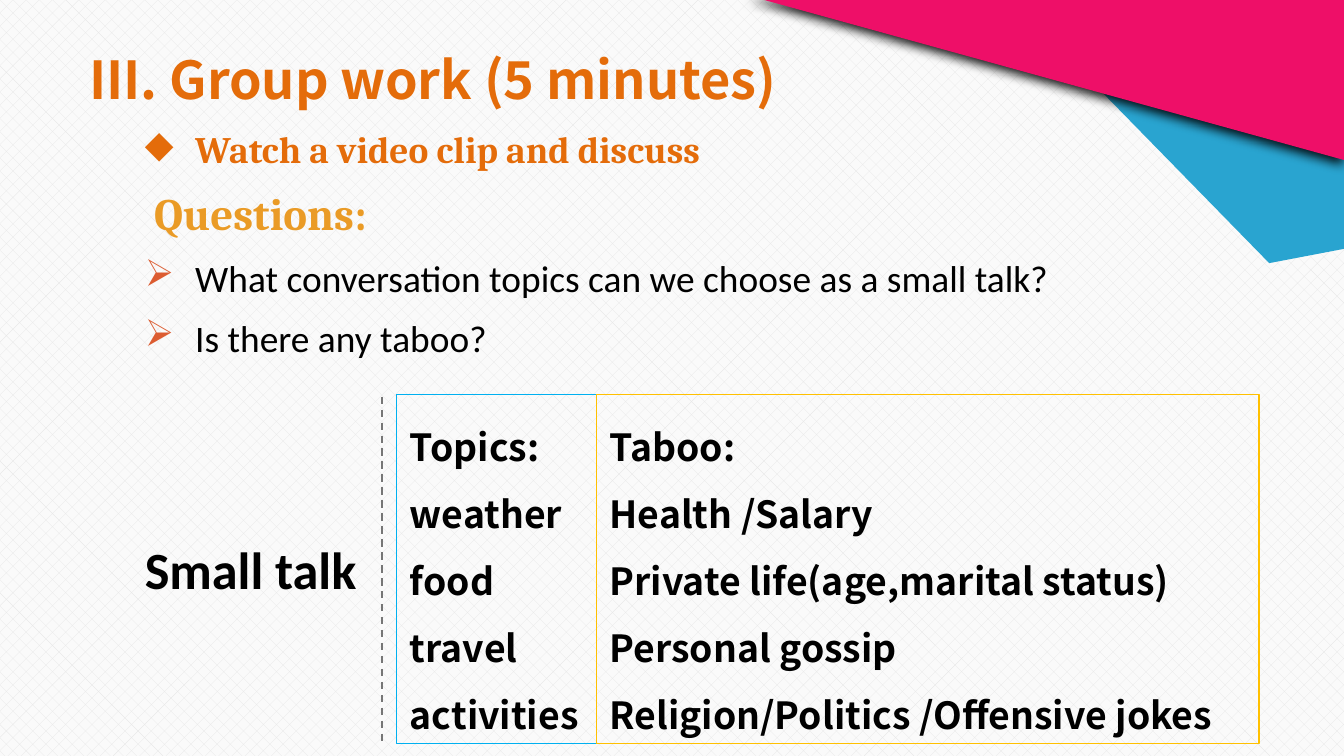
from dataclasses import dataclass

from lxml import etree
from pptx import Presentation
from pptx import util as u
from pptx.dml.color import RGBColor
from pptx.enum import dml, shapes, text
from pptx.oxml import ns

Pt = u.Pt


@dataclass(frozen=True)
class Theme:
    """Colours, fonts and type sizes of the slide."""
    paper: str = "FAFAFA"
    weave: str = "E6E6E6"
    pink: str = "EE0F68"
    blue: str = "29A4D0"
    grey: str = "767676"
    ink: str = "000000"
    orange: str = "E46C0A"
    gold: str = "EA9B26"
    rust: str = "DC5C31"
    topic_line: str = "00B0F0"
    taboo_line: str = "FFC000"
    sans: str = "Noto Sans CJK SC"
    body: str = "Calibri"
    serif: str = "Cambria"
    large: int = 28
    medium: int = 24
    small: int = 20


T = Theme()


def rgb(value):
    """Turn a hex string into a colour."""
    return RGBColor.from_string(value)


def add_xml(parent, tag, **attrs):
    """Append a DrawingML element and return it."""
    return etree.SubElement(parent, ns.qn(tag), attrs)


def set_background(s):
    """Give the slide its fine woven pattern."""
    fill = s.background.fill
    fill.patterned()
    fill.pattern = dml.MSO_PATTERN.PERCENT_30
    fill.fore_color.rgb = rgb(T.weave)
    fill.back_color.rgb = rgb(T.paper)


def paint(sp, color):
    """Fill a shape flat, without outline or shadow."""
    sp.fill.solid()
    sp.fill.fore_color.rgb = rgb(color)
    sp.line.fill.background()
    sp.shadow.inherit = False


def add_kite(s, points, color):
    """Draw a filled polygon through the points."""
    pts = [(Pt(x), Pt(y)) for x, y in points]
    builder = s.shapes.build_freeform(*pts[0])
    builder.add_line_segments(pts[1:], close=True)
    paint(builder.convert_to_shape(), color)


def add_corner(s, box, color):
    """Draw the top right corner triangle with its soft shadow."""
    sp = s.shapes.add_shape(shapes.MSO_SHAPE.RIGHT_TRIANGLE, *map(Pt, box))
    paint(sp, color)
    xfrm = sp.element.spPr.find(ns.qn("a:xfrm"))
    xfrm.set("flipH", "1")
    xfrm.set("flipV", "1")
    effects = sp.element.spPr.find(ns.qn("a:effectLst"))
    shadow = add_xml(effects, "a:outerShdw", blurRad=str(Pt(6)), dist=str(Pt(3)),
                     dir=str(135 * 60000), algn="tr", rotWithShape="0")
    add_xml(add_xml(shadow, "a:srgbClr", val=T.ink), "a:alpha", val="90000")


def add_divider(s, x, top, bottom):
    """Draw a dashed vertical line."""
    line = s.shapes.add_connector(shapes.MSO_CONNECTOR.STRAIGHT,
                                  Pt(x), Pt(top), Pt(x), Pt(bottom))
    line.line.color.rgb = rgb(T.grey)
    line.line.width = Pt(1)
    line.line.dash_style = dml.MSO_LINE.DASH
    add_xml(line.element.spPr, "a:effectLst")


def add_text(s, box, wrap=True, anchor=text.MSO_ANCHOR.TOP):
    """Add an empty text box and return its frame."""
    tf = s.shapes.add_textbox(*map(Pt, box)).text_frame
    tf.word_wrap = wrap
    tf.vertical_anchor = anchor
    return tf


def set_bullet(p, char, color):
    """Hang a coloured bullet in front of a paragraph."""
    pPr = p._p.get_or_add_pPr()
    pPr.set("marL", str(Pt(27)))
    pPr.set("indent", str(-Pt(27)))
    add_xml(add_xml(pPr, "a:buClr"), "a:srgbClr", val=color)
    add_xml(pPr, "a:buChar", char=char)


def add_line(tf, words, font, size, color=T.ink, bold=True, bullet=None,
             align=text.PP_ALIGN.LEFT, spacing=None, before=None):
    """Write the next paragraph of a frame and return it."""
    p = tf.paragraphs[0] if not tf.paragraphs[0].runs else tf.add_paragraph()
    if bullet:
        set_bullet(p, *bullet)
    p.alignment = align
    if spacing:
        p.line_spacing = spacing
    if before:
        p.space_before = Pt(before)
    p.add_run().text = words
    p.font.name, p.font.size, p.font.bold = font, Pt(size), bold
    p.font.color.rgb = rgb(color)
    return p


def add_list_box(s, box, color, lines):
    """Draw an outlined box holding a list of lines."""
    sp = s.shapes.add_shape(shapes.MSO_SHAPE.RECTANGLE, *map(Pt, box))
    sp.fill.background()
    sp.line.color.rgb = rgb(color)
    sp.line.width = Pt(0.75)
    sp.shadow.inherit = False
    tf = sp.text_frame
    tf.word_wrap = True
    tf.vertical_anchor = text.MSO_ANCHOR.TOP
    for words in lines:
        add_line(tf, words, T.sans, T.small, spacing=1.5)


def add_questions(s, box):
    """Write the heading and the bulleted questions."""
    tf = add_text(s, box)
    layout = dict(align=text.PP_ALIGN.JUSTIFY, spacing=1.1, before=6)
    p = add_line(tf, "Questions:", T.serif, T.medium, T.gold, **layout)
    p._p.get_or_add_pPr().set("marL", str(Pt(5)))
    for words in ("What conversation topics can we choose as a small talk?",
                  "Is there any taboo?"):
        add_line(tf, words, T.body, T.small, bold=False, bullet=("➢", T.rust), **layout)


def main():
    """Build the slide and save it."""
    prs = Presentation()
    prs.slide_width, prs.slide_height = Pt(720), Pt(405)
    s = prs.slides.add_slide(prs.slide_layouts[6])
    set_background(s)
    add_kite(s, [(591, 50), (680, 141), (837, 111)], T.blue)
    add_corner(s, (404, -1.5, 317, 87.5), T.pink)
    add_divider(s, 204.5, 212.5, 399)

    tf = add_text(s, (70.5, 284.5, 154, 43))
    add_line(tf, "Small talk", T.body, T.large)
    tf = add_text(s, (25, 11, 413.5, 62.5), anchor=text.MSO_ANCHOR.MIDDLE)
    add_line(tf, "III. Group work (5 minutes)", T.sans, T.large, T.orange,
             align=text.PP_ALIGN.CENTER)
    tf = add_text(s, (70.5, 64, 358.5, 31), wrap=False)
    add_line(tf, "Watch a video clip and discuss", T.serif, T.small, T.orange,
             bullet=("◆", T.orange))
    add_questions(s, (70.5, 93, 512, 119.5))

    add_list_box(s, (212.5, 211.5, 107, 187), T.topic_line,
                 ["Topics:", "weather", "food", "travel", "activities"])
    add_list_box(s, (319.5, 211.5, 355, 187), T.taboo_line,
                 ["Taboo:", "Health /Salary", "Private life(age,marital status)",
                  "Personal gossip", "Religion/Politics /Offensive jokes"])
    prs.save("out.pptx")


if __name__ == "__main__":
    main()
